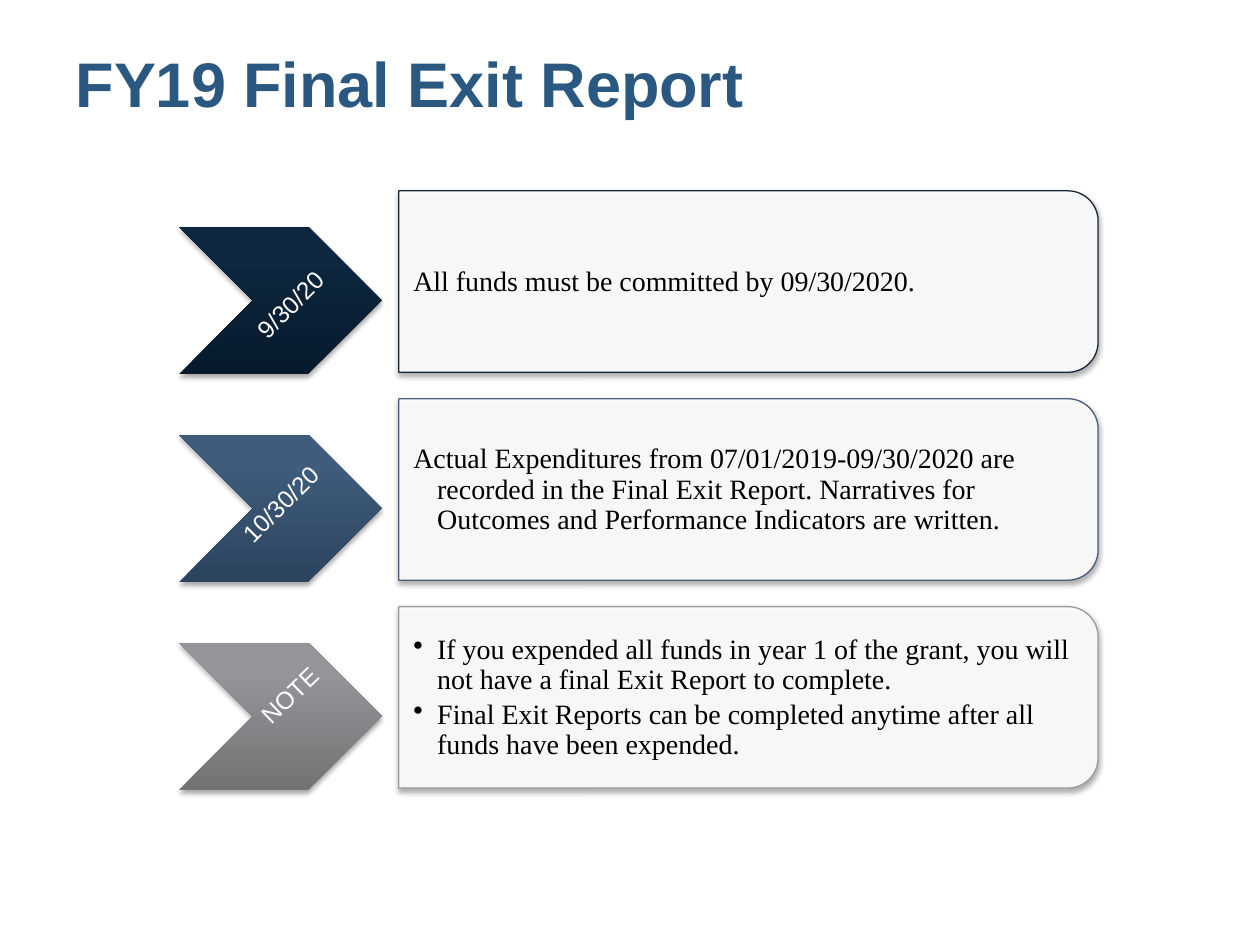
from copy import deepcopy

from lxml.etree import SubElement
from pptx import Presentation
from pptx.dml.color import RGBColor
from pptx.enum.shapes import MSO_SHAPE
from pptx.enum.text import MSO_ANCHOR, MSO_AUTO_SIZE, PP_ALIGN
from pptx.oxml.ns import qn
from pptx.util import Inches, Pt

PITCH = 1.65
INDENT = Inches(0.19)

# Each row: chevron gradient, panel line, label, label box, label turn, bulleted, texts
ROWS = [
    (("061A2C", "0E273E", "0D273F"), "14283A",
     "9/30/20", (1.88, 2.23, 0.89, 0.36), 315, False,
     ["All funds must be committed by 09/30/2020."]),
    (("2C435E", "3F5C7D", "3E5C7E"), "485F79",
     "10/30/20", (1.74, 3.8, 1.04, 0.35), 314.9, False,
     ["Actual Expenditures from 07/01/2019-09/30/2020 are recorded in the "
      "Final Exit Report. Narratives for Outcomes and Performance Indicators "
      "are written."]),
    (("727375", "949598", "949699"), "999A9C",
     "NOTE", (1.93, 5.33, 0.78, 0.36), 316, True,
     ["If you expended all funds in year 1 of the grant, you will not have a "
      "final Exit Report to complete.",
      "Final Exit Reports can be completed anytime after all funds have been "
      "expended."]),
]


def paint(color):
    return RGBColor.from_string(color)


def place(*box):
    return [Inches(side) for side in box]


def style(font, name, size, color, bold=False):
    font.name, font.size, font.bold = name, Pt(size), bold
    font.color.rgb = paint(color)


def add_alpha(color, percent):
    SubElement(color, qn("a:alpha"), val=str(percent * 1000))


def add_shadow(shape):
    """Give the shape a soft black shadow straight below it."""
    shape.shadow.inherit = False
    effects = shape._element.spPr.find(qn("a:effectLst"))
    outer = SubElement(effects, qn("a:outerShdw"), blurRad=str(Pt(3.1)),
                       dist=str(Pt(1.8)), dir="5400000", rotWithShape="0")
    add_alpha(SubElement(outer, qn("a:srgbClr"), val="000000"), 35)


def add_arrow(slide, top, colors):
    arrow = slide.shapes.add_shape(MSO_SHAPE.CHEVRON, *place(1.42, top, 1.61, 1.17))
    arrow.fill.gradient()
    arrow.fill.gradient_angle = 90
    stops = arrow._element.spPr.find(qn("a:gradFill")).find(qn("a:gsLst"))
    stops.append(deepcopy(stops[-1]))
    for stop, spot, color in zip(arrow.fill.gradient_stops, (0, 0.8, 1), colors):
        stop.position = spot
        stop.color.rgb = paint(color)
    arrow.line.fill.background()
    add_shadow(arrow)


def add_panel(slide, top, color):
    panel = slide.shapes.add_shape(MSO_SHAPE.ROUND_2_SAME_RECTANGLE,
                                   *place(5.22, top, 1.44, 5.55))
    panel.rotation = 90
    panel.fill.solid()
    panel.fill.fore_color.rgb = paint("FFFFFF")
    fill = panel._element.spPr.find(qn("a:solidFill"))
    add_alpha(fill[0], 90)
    panel.line.color.rgb = paint(color)
    panel.line.width = Pt(0.75)
    add_shadow(panel)


def add_body(slide, top, texts, bulleted):
    frame = slide.shapes.add_textbox(*place(3.16, top, 5.49, 1.3)).text_frame
    frame.word_wrap = True
    frame.vertical_anchor = MSO_ANCHOR.MIDDLE
    frame.margin_left = Inches(0.12)
    frame.margin_top = frame.margin_right = frame.margin_bottom = Inches(0.01)
    for index, text in enumerate(texts):
        para = frame.add_paragraph() if index else frame.paragraphs[0]
        para.level = 1
        para.line_spacing = 0.9
        para.space_after = Pt(2.4)
        props = para._p.get_or_add_pPr()
        props.set("marL", str(INDENT))
        props.set("indent", str(-INDENT))
        if bulleted:
            SubElement(props, qn("a:buChar"), char="•")
        run = para.add_run()
        run.text = text
        style(run.font, "Times New Roman", 16, "000000")


def add_label(slide, text, box, turn):
    label = slide.shapes.add_textbox(*place(*box))
    label.rotation = turn
    frame = label.text_frame
    frame.word_wrap = False
    frame.auto_size = MSO_AUTO_SIZE.SHAPE_TO_FIT_TEXT
    run = frame.paragraphs[0].add_run()
    run.text = text
    style(run.font, "Arial", 14, "FFFFFF")


def set_title(slide, text):
    title = slide.shapes.title
    title.left, title.top, title.width, title.height = place(0.5, 0.3, 9, 1.25)
    frame = title.text_frame
    frame.vertical_anchor = MSO_ANCHOR.TOP
    para = frame.paragraphs[0]
    para.alignment = PP_ALIGN.LEFT
    run = para.add_run()
    run.text = text
    style(run.font, "Arial", 36, "2B5880", bold=True)


def main():
    deck = Presentation()
    deck.slide_width, deck.slide_height = place(10, 7.5)
    slide = deck.slides.add_slide(deck.slide_layouts[5])
    set_title(slide, "FY19 Final Exit Report")
    for index, (colors, line, name, box, turn, bulleted, texts) in enumerate(ROWS):
        shift = index * PITCH
        add_arrow(slide, 1.8 + shift, colors)
        add_panel(slide, -0.54 + shift, line)
        add_body(slide, 1.59 + shift, texts, bulleted)
        add_label(slide, name, box, turn)
    deck.save("out.pptx")


if __name__ == "__main__":
    main()
